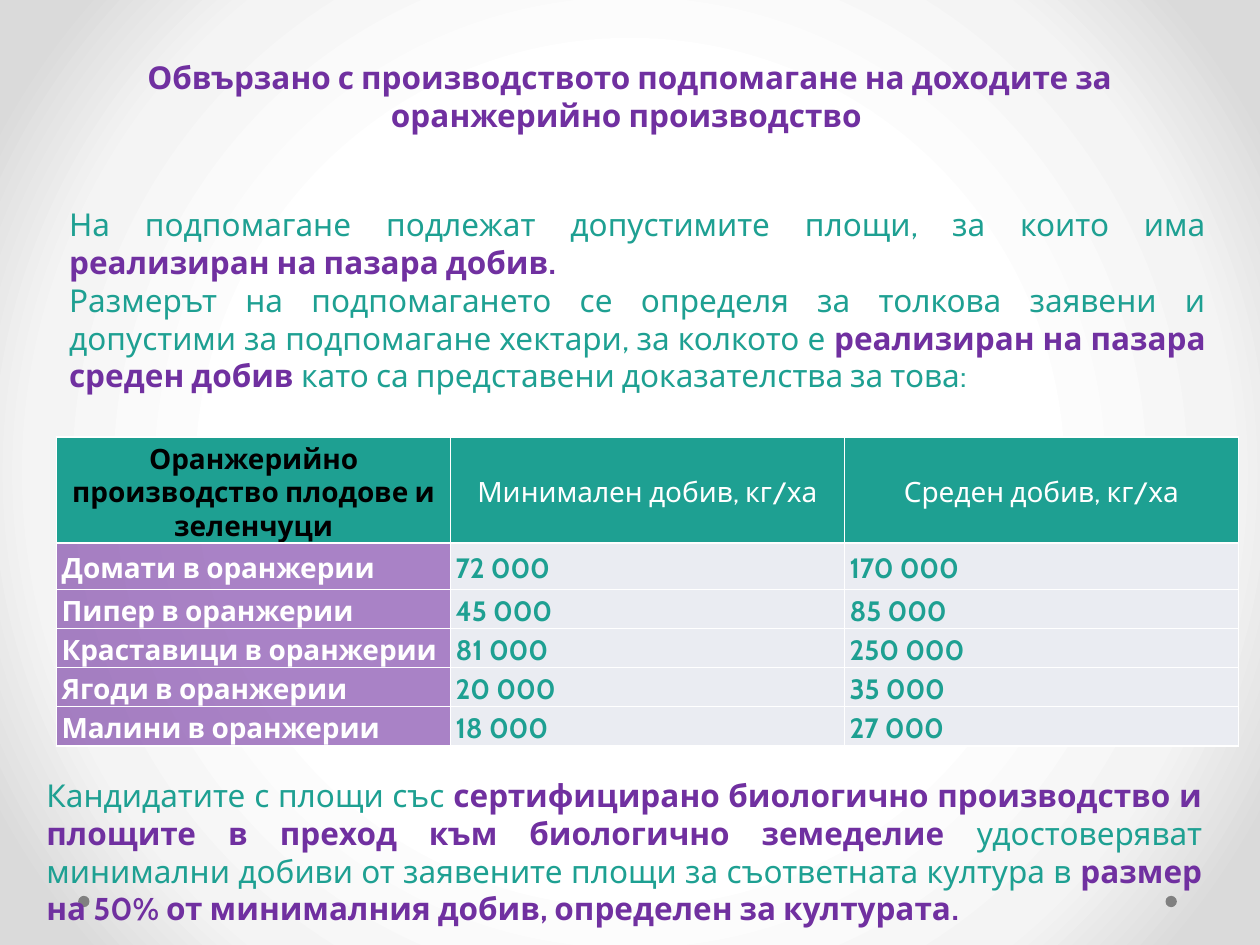
from pptx import Presentation
from pptx.dml.color import RGBColor
from pptx.enum.shapes import MSO_SHAPE
from pptx.enum.text import MSO_ANCHOR, MSO_AUTO_SIZE, PP_ALIGN
from pptx.oxml import parse_xml
from pptx.oxml.ns import qn
from pptx.util import Inches, Pt
from lxml import etree

PURPLE = RGBColor(0x70, 0x30, 0xA0)
TEAL = RGBColor(0x1E, 0xA0, 0x92)
WHITE = RGBColor(0xFF, 0xFF, 0xFF)
BLACK = RGBColor(0x00, 0x00, 0x00)
GRAY = RGBColor(0x80, 0x80, 0x80)
PALE = RGBColor(0xEA, 0xEC, 0xF2)
NS = "http://schemas.openxmlformats.org/drawingml/2006/main"


def add_runs(p, runs, size, align):
    p.alignment = align
    for text, color, bold in runs:
        r = p.add_run()
        r.text = text
        r.font.name = "Cabin"
        r.font.size = Pt(size)
        r.font.bold = bold
        r.font.color.rgb = color


def add_text(s, box, paragraphs, align):
    tf = s.shapes.add_textbox(*[Inches(v) for v in box]).text_frame
    tf.word_wrap = True
    tf.auto_size = MSO_AUTO_SIZE.SHAPE_TO_FIT_TEXT
    for i, runs in enumerate(paragraphs):
        p = tf.add_paragraph() if i else tf.paragraphs[0]
        add_runs(p, runs, 18, align)


prs = Presentation()
prs.slide_width, prs.slide_height = Inches(10), Inches(7.5)
s = prs.slides.add_slide(prs.slide_layouts[6])

s.background.fill.gradient()
grad = next(s.element.iter(qn("a:gradFill")))
stops = "".join(
    f'<a:gs pos="{pos}000"><a:srgbClr val="{color}"/></a:gs>'
    for pos, color in [(50, "FFFFFF"), (76, "F4F4F4"), (92, "DADADA")]
)
grad.getparent().replace(grad, parse_xml(
    f'<a:gradFill xmlns:a="{NS}" rotWithShape="1"><a:gsLst>{stops}</a:gsLst>'
    '<a:path path="circle"><a:fillToRect l="50000" t="50000" r="50000" b="50000"/>'
    '</a:path></a:gradFill>'
))

for x in (9.25, 0.62):
    dot = s.shapes.add_shape(MSO_SHAPE.OVAL, Inches(x), Inches(7.11), Inches(0.09), Inches(0.09))
    dot.shadow.inherit = False
    dot.fill.solid()
    dot.fill.fore_color.rgb = GRAY
    dot.line.fill.background()

add_text(s, (0.46, 0.41, 9.08, 0.71), [
    [("Обвързано с производството подпомагане на доходите за оранжерийно производство\u00a0", PURPLE, True)],
], PP_ALIGN.CENTER)

rows = [
    ("Оранжерийно производство плодове и зеленчуци", "Минимален добив, кг/ха", "Среден добив, кг/ха"),
    ("Домати в оранжерии", "72 000", "170 000"),
    ("Пипер в оранжерии", "45 000", "85 000"),
    ("Краставици в оранжерии", "81 000", "250 000"),
    ("Ягоди в оранжерии", "20 000", "35 000"),
    ("Малини в оранжерии", "18 000", "27 000"),
]
heights = [0.83, 0.37] + [0.31] * 4
table = s.shapes.add_table(
    len(rows), 3, Inches(0.45), Inches(3.47), Inches(9.38), Inches(sum(heights))
).table
for row, height in zip(table.rows, heights):
    row.height = Inches(height)

for i, row in enumerate(rows):
    for j, text in enumerate(row):
        cell = table.cell(i, j)
        cell.vertical_anchor = MSO_ANCHOR.MIDDLE
        cell.margin_left = cell.margin_right = cell.margin_top = Inches(0.04)
        cell.margin_bottom = 0
        if i == 0:
            fill, color, bold, align = TEAL, WHITE if j else BLACK, j == 0, PP_ALIGN.CENTER
        elif j == 0:
            fill, color, bold, align = PURPLE, WHITE, True, PP_ALIGN.LEFT
        else:
            fill, color, bold, align = PALE, TEAL, True, PP_ALIGN.LEFT
        add_runs(cell.text_frame.paragraphs[0], [(text, color, bold)], 16, align)
        tcPr = cell._tc.get_or_add_tcPr()
        for side in "LRTB":
            tcPr.append(parse_xml(
                f'<a:ln{side} xmlns:a="{NS}" w="{Pt(1)}"><a:solidFill>'
                f'<a:srgbClr val="{WHITE}"/></a:solidFill></a:ln{side}>'
            ))
        cell.fill.solid()
        cell.fill.fore_color.rgb = fill
        if fill == PURPLE:
            clr = tcPr.find(qn("a:solidFill")).find(qn("a:srgbClr"))
            etree.SubElement(clr, qn("a:alpha")).set("val", "60000")

add_text(s, (0.45, 1.58, 9.22, 1.62), [
    [("На подпомагане подлежат допустимите площи, за които има ", TEAL, False),
     ("реализиран на пазара добив. ", PURPLE, True)],
    [("Размерът на подпомагането се определя за толкова заявени и допустими за подпомагане хектари, за колкото е ", TEAL, False),
     ("реализиран на пазара среден добив ", PURPLE, True),
     ("като са представени доказателства за това: ", TEAL, False)],
], PP_ALIGN.JUSTIFY)

add_text(s, (0.27, 6.11, 9.37, 1.31), [
    [("Кандидатите с площи със ", TEAL, False),
     ("сертифицирано биологично производство и площите в преход към биологично земеделие ", PURPLE, True),
     ("удостоверяват минимални добиви от заявените площи за съответната култура в ", TEAL, False),
     ("размер на 50% от минималния добив, определен за културата.", PURPLE, True)],
], PP_ALIGN.JUSTIFY)

prs.save("out.pptx")
